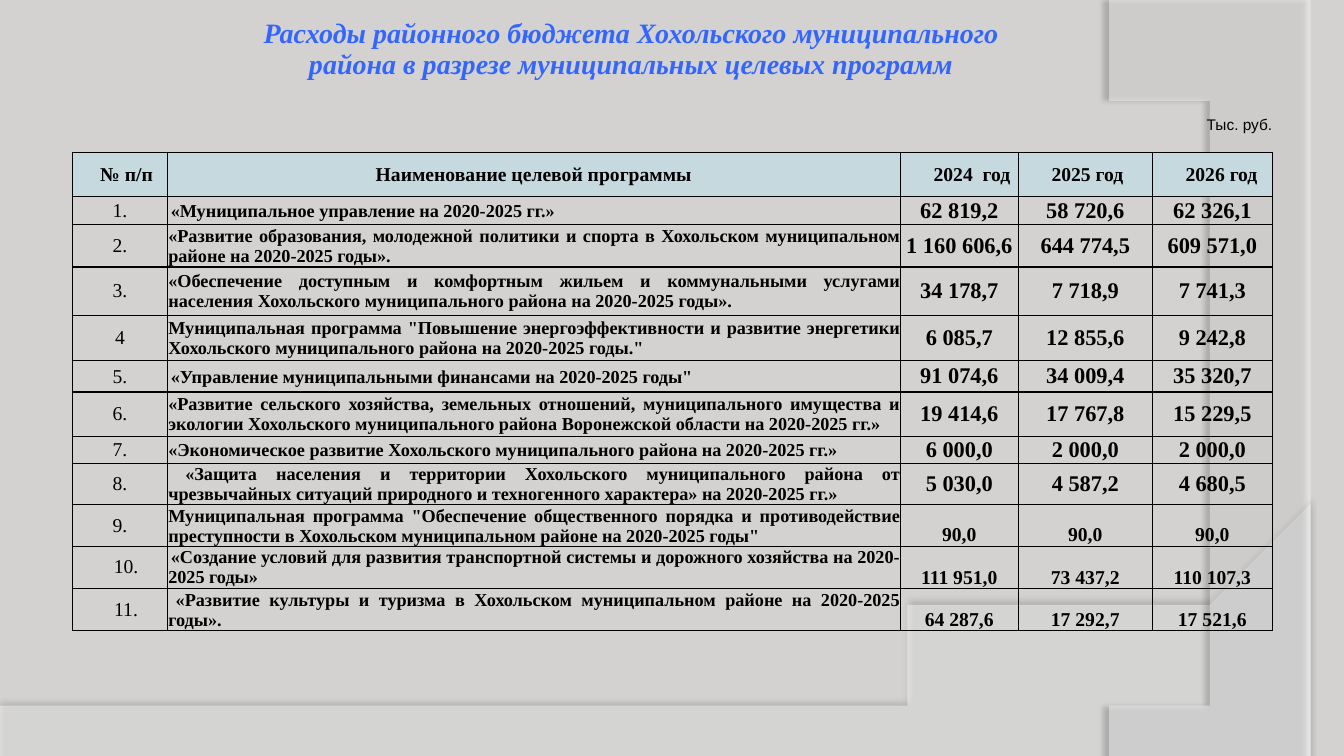
from dataclasses import dataclass

from lxml import etree
from pptx import Presentation
from pptx import util as u
from pptx.dml.color import RGBColor
from pptx.enum import text
from pptx.oxml.ns import qn

Align, Anchor = text.PP_ALIGN, text.MSO_ANCHOR


@dataclass(frozen=True)
class Theme:
    background: str = "D4D2D0"
    wave: str = "FFFFFF"
    ink: str = "000000"
    title: str = "3366FF"
    header: str = "C5D9DF"
    serif: str = "Times New Roman"
    sans: str = "Arial"
    title_size: int = 20
    unit_size: int = 11
    body_size: int = 14
    program_size: int = 13
    lead_size: int = 7
    amount_size: int = 16
    no_style: str = "{2D5ABB26-0587-4C30-8999-92F81FD0307C}"


COLUMNS = [0.94, 7.27, 1.17, 1.33, 1.19]
ROWS = [0.98, 0.35, 0.44, 0.28, 0.42, 0.48, 0.45, 0.31, 0.44, 0.27, 0.41, 0.41, 0.42, 0.42]
TITLE = "Расходы районного бюджета Хохольского муниципального района в разрезе муниципальных целевых программ"
HEADERS = ["№ п/п", "Наименование целевой программы", "2024  год", "2025 год", "2026 год"]
PROGRAMS = [
    ("1.", " «Муниципальное управление на 2020-2025 гг.»", "62 819,2", "58 720,6", "62 326,1"),
    ("2.", "«Развитие образования, молодежной политики и спорта в Хохольском муниципальном районе на 2020-2025 годы».",
     "1 160 606,6", "644 774,5", "609 571,0"),
    ("3.", "«Обеспечение доступным и комфортным жильем и коммунальными услугами населения "
     "Хохольского муниципального района на 2020-2025 годы».", "34 178,7", "7 718,9", "7 741,3"),
    ("4", 'Муниципальная программа "Повышение энергоэффективности и развитие энергетики '
     'Хохольского муниципального района на 2020-2025 годы."', "6 085,7", "12 855,6", "9 242,8"),
    ("5.", ' «Управление муниципальными финансами на 2020-2025 годы"', "91 074,6", "34 009,4", "35 320,7"),
    ("6.", "«Развитие сельского хозяйства, земельных отношений, муниципального имущества и экологии "
     "Хохольского муниципального района Воронежской области на 2020-2025 гг.»", "19 414,6", "17 767,8", "15 229,5"),
    ("7.", "«Экономическое развитие Хохольского муниципального района на 2020-2025 гг.»",
     "6 000,0", "2 000,0", "2 000,0"),
    ("8.", " «Защита населения и территории Хохольского муниципального района от чрезвычайных ситуаций "
     "природного и техногенного характера» на 2020-2025 гг.»", "5 030,0", "4 587,2", "4 680,5"),
    ("9.", 'Муниципальная программа "Обеспечение общественного порядка и противодействие преступности '
     'в Хохольском муниципальном районе на 2020-2025 годы"', "90,0", "90,0", "90,0"),
    ("10.", " «Создание условий для развития транспортной системы и дорожного хозяйства на 2020-2025 годы»",
     "111 951,0", "73 437,2", "110 107,3"),
    ("11.", " «Развитие культуры и туризма в Хохольском муниципальном районе на 2020-2025 годы».",
     "64 287,6", "17 292,7", "17 521,6"),
]


def bezier(start, first, second, end, steps=48):
    points = []
    for step in range(1, steps + 1):
        t = step / steps
        weights = ((1 - t) ** 3, 3 * t * (1 - t) ** 2, 3 * t * t * (1 - t), t ** 3)
        points.append(tuple(sum(w * p[axis] for w, p in zip(weights, (start, first, second, end)))
                            for axis in (0, 1)))
    return points


class BudgetSlide:
    def __init__(self, deck, theme):
        self.theme = theme
        self.slide = deck.slides.add_slide(deck.slide_layouts[6])
        backdrop = self.slide.background.fill
        backdrop.solid()
        backdrop.fore_color.rgb = RGBColor.from_string(theme.background)

    def wave(self, outline, opacity, shade, distance, direction):
        builder = self.slide.shapes.build_freeform(*outline[0], scale=u.Inches(1))
        builder.add_line_segments(outline[1:], close=True)
        wave = builder.convert_to_shape()
        wave.fill.solid()
        wave.fill.fore_color.rgb = RGBColor.from_string(self.theme.wave)
        wave.line.fill.background()
        wave.shadow.inherit = False
        properties = wave.element.spPr
        tint = properties.find(qn("a:solidFill"))[0]
        etree.SubElement(tint, qn("a:alpha"), val=str(opacity * 1000))
        shadow = etree.SubElement(properties.find(qn("a:effectLst")), qn("a:outerShdw"),
                                  blurRad=str(u.Pt(4)), dist=str(u.Pt(distance)),
                                  dir=str(direction * 60000), algn="ctr", rotWithShape="0")
        color = etree.SubElement(shadow, qn("a:srgbClr"), val=self.theme.ink)
        etree.SubElement(color, qn("a:alpha"), val=str(shade * 1000))

    def grid(self, left, top, columns, rows):
        frame = self.slide.shapes.add_table(len(rows), len(columns), u.Inches(left), u.Inches(top),
                                            u.Inches(sum(columns)), u.Inches(sum(rows)))
        table = frame.table
        table.first_row = table.horz_banding = False
        frame.element.find(".//" + qn("a:tableStyleId")).text = self.theme.no_style
        for column, width in zip(table.columns, columns):
            column.width = u.Inches(width)
        for row, height in zip(table.rows, rows):
            row.height = u.Inches(height)
        for cell in table.iter_cells():
            cell.margin_left = cell.margin_right = cell.margin_top = cell.margin_bottom = 0
            cell.fill.background()
        return table

    def entry(self, cell, words, size, bold=True, italic=False, color=None, font=None,
              align=Align.CENTER, anchor=Anchor.MIDDLE, inset=0, indent=0, first=0):
        cell.vertical_anchor = anchor
        cell.margin_left = cell.margin_right = cell.margin_top = u.Inches(inset)
        paragraph = cell.text_frame.paragraphs[0]
        paragraph.alignment = align
        if indent:
            paragraph_style = paragraph._p.get_or_add_pPr()
            paragraph_style.set("marL", str(u.Inches(indent)))
            paragraph_style.set("indent", str(u.Inches(first)))
        paragraph.text = words[:1] if words.startswith(" ") else words
        if words.startswith(" "):
            paragraph.add_run().text = words[1:]
        for run in paragraph.runs:
            run.font.size = u.Pt(size if run.text.strip() else self.theme.lead_size)
            run.font.bold, run.font.italic = bold, italic
            run.font.name = font or self.theme.serif
            run.font.color.rgb = RGBColor.from_string(color or self.theme.ink)

    def rule(self, cell, fill=None):
        if fill:
            cell.fill.solid()
            cell.fill.fore_color.rgb = RGBColor.from_string(fill)
        properties = cell._tc.get_or_add_tcPr()
        for position, side in enumerate(("a:lnL", "a:lnR", "a:lnT", "a:lnB")):
            line = etree.Element(qn(side), w=str(u.Pt(1)))
            paint = etree.SubElement(line, qn("a:solidFill"))
            etree.SubElement(paint, qn("a:srgbClr"), val=self.theme.ink)
            properties.insert(position, line)


def main():
    deck = Presentation()
    deck.slide_width, deck.slide_height = u.Inches(13.33), u.Inches(7.5)
    theme = Theme()
    page = BudgetSlide(deck, theme)
    page.wave([(0, 7.05), (0, 7.51), (13.33, 7.51), (13.33, 5.2),
               *bezier((13.33, 5.2), (7.45, 7.29), (5.21, 7.19), (0, 7.05))], 45, 35, 3.5, 270)
    page.wave([(13.33, 0.02), (13.33, 7.5), (10.95, 7.5),
               *bezier((10.95, 7.5), (12.46, 6.19), (13.57, 3), (10.67, 0))], 40, 45, 4, 180)

    budget = page.grid(0.72, 0.18, COLUMNS, ROWS)
    for row in (0, 1):
        budget.cell(row, 0).merge(budget.cell(row, 2))
    page.entry(budget.cell(0, 0), TITLE, theme.title_size, italic=True, color=theme.title,
               anchor=Anchor.TOP, indent=1.7)
    page.entry(budget.cell(1, 4), "Тыс. руб.", theme.unit_size, bold=False, font=theme.sans,
               align=Align.RIGHT, anchor=Anchor.TOP)

    for column, heading in enumerate(HEADERS):
        is_year = column > 1
        page.entry(budget.cell(2, column), heading, theme.body_size,
                   align=Align.LEFT if is_year else Align.CENTER,
                   indent=0.33 if is_year else (0.11, 0)[column], first=0 if is_year else 0.02)
        page.rule(budget.cell(2, column), theme.header)

    for row, (number, program, *amounts) in enumerate(PROGRAMS, 3):
        low = row > 10
        page.entry(budget.cell(row, 0), number, theme.body_size, bold=False,
                   indent=0.12 if len(number) > 2 else 0)
        page.entry(budget.cell(row, 1), program, theme.program_size, align=Align.JUSTIFY, inset=0.01)
        for column, amount in enumerate(amounts, 2):
            page.entry(budget.cell(row, column), amount, theme.body_size if low else theme.amount_size,
                       anchor=Anchor.BOTTOM if low else Anchor.MIDDLE, inset=0.01 if low else 0)
        for column in range(len(COLUMNS)):
            page.rule(budget.cell(row, column))

    deck.save("out.pptx")


if __name__ == "__main__":
    main()
